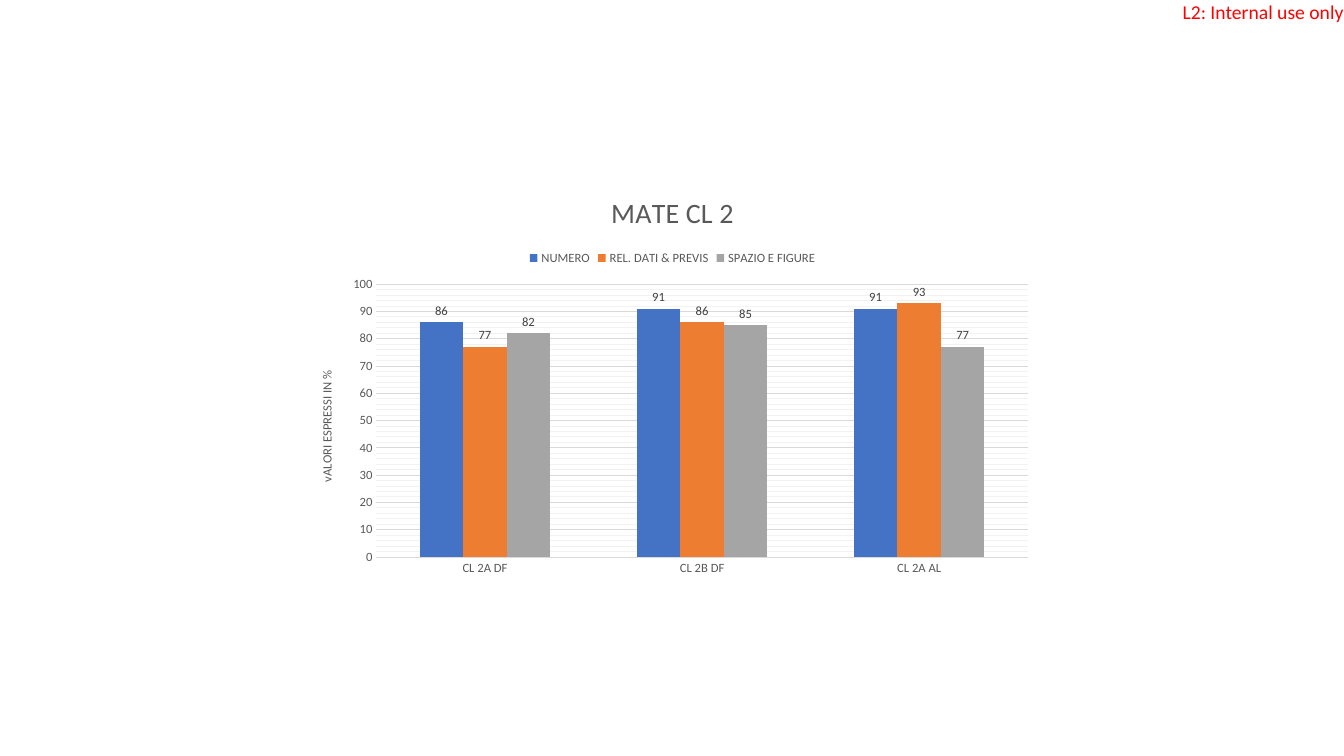
from dataclasses import dataclass

from lxml.etree import SubElement
from pptx import Presentation
from pptx.chart.data import CategoryChartData
from pptx.dml.color import RGBColor
from pptx.enum.chart import XL_CHART_TYPE as ChartType
from pptx.enum.chart import XL_LABEL_POSITION as LabelPos
from pptx.enum.chart import XL_LEGEND_POSITION as LegendPos
from pptx.enum.chart import XL_TICK_MARK as TickMark
from pptx.oxml.ns import qn
from pptx.util import Inches, Pt


@dataclass(frozen=True)
class Theme:
    font: str = "Calibri"
    notice: str = "FF0000"
    text: str = "595959"
    label: str = "404040"
    grid: str = "D9D9D9"
    minor_grid: str = "F2F2F2"
    series: tuple = ("4472C4", "ED7D31", "A5A5A5")
    notice_size: int = 14
    title_size: int = 20
    chart_size: int = 9
    line_width: float = 0.75


THEME = Theme()
CLASSES = ("CL 2A DF", "CL 2B DF", "CL 2A AL")
SCORES = {
    "NUMERO": (86, 91, 91),
    "REL. DATI & PREVIS": (77, 86, 93),
    "SPAZIO E FIGURE": (82, 85, 77),
}
PLOT_AREA = {"x": 0.1, "y": 0.27, "w": 0.88, "h": 0.67}


def style_font(font, size, color):
    font.name = THEME.font
    font.size = Pt(size)
    font.bold = False
    font.color.rgb = RGBColor.from_string(color)


def style_line(line, color):
    line.color.rgb = RGBColor.from_string(color)
    line.width = Pt(THEME.line_width)


def add_run(p, text, size, color):
    r = p.add_run()
    r.text = text
    style_font(r.font, size, color)


def add_notice(slide, text):
    box = slide.shapes.add_textbox(Inches(11.73), 0, Inches(1.64), Inches(0.23))
    tf = box.text_frame
    tf.margin_left = tf.margin_top = tf.margin_right = tf.margin_bottom = 0
    tf.word_wrap = False
    add_run(tf.paragraphs[0], text, THEME.notice_size, THEME.notice)


def set_title(titled, text, size):
    add_run(titled.text_frame.paragraphs[0], text, size, THEME.text)


def style_minor_grid(chart):
    grid = next(chart.element.iter(qn("c:minorGridlines")))
    line = SubElement(SubElement(grid, qn("c:spPr")), qn("a:ln"))
    line.set("w", str(Pt(THEME.line_width)))
    fill = SubElement(line, qn("a:solidFill"))
    SubElement(fill, qn("a:srgbClr")).set("val", THEME.minor_grid)


def style_axes(chart):
    cat, val = chart.category_axis, chart.value_axis
    for axis in (cat, val):
        axis.major_tick_mark = axis.minor_tick_mark = TickMark.NONE
        style_font(axis.tick_labels.font, THEME.chart_size, THEME.text)
    style_line(cat.format.line, THEME.grid)
    val.format.line.fill.background()
    val.minimum_scale, val.maximum_scale = 0, 100
    val.major_unit, val.minor_unit = 10, 2
    val.has_major_gridlines = val.has_minor_gridlines = True
    style_line(val.major_gridlines.format.line, THEME.grid)
    style_minor_grid(chart)
    val.tick_labels.number_format = "0"
    val.tick_labels.number_format_is_linked = False
    set_title(val.axis_title, "vALORI ESPRESSI IN %", THEME.chart_size)


def style_series(series, color):
    series.format.fill.solid()
    series.format.fill.fore_color.rgb = RGBColor.from_string(color)
    labels = series.data_labels
    labels.show_value = True
    labels.position = LabelPos.OUTSIDE_END
    labels.number_format = "0"
    labels.number_format_is_linked = False
    style_font(labels.font, THEME.chart_size, THEME.label)


def place_plot_area(chart):
    area = chart.element.chart.plotArea
    layout = area.find(qn("c:layout"))
    if layout is None:
        layout = SubElement(area, qn("c:layout"))
        area.insert(0, layout)
    manual = SubElement(layout, qn("c:manualLayout"))
    settings = {"layoutTarget": "inner", "xMode": "edge", "yMode": "edge", **PLOT_AREA}
    for name, value in settings.items():
        SubElement(manual, qn(f"c:{name}")).set("val", str(value))


def add_score_chart(slide):
    data = CategoryChartData(number_format="0")
    data.categories = CLASSES
    for name, values in SCORES.items():
        data.add_series(name, values)
    chart = slide.shapes.add_chart(
        ChartType.COLUMN_CLUSTERED,
        Inches(3), Inches(1.73), Inches(7.34), Inches(4.04), data,
    ).chart
    style_font(chart.font, THEME.chart_size, THEME.text)
    set_title(chart.chart_title, "MATE CL 2", THEME.title_size)
    chart.has_legend = True
    chart.legend.position = LegendPos.TOP
    chart.legend.include_in_layout = False
    style_font(chart.legend.font, THEME.chart_size, THEME.text)
    style_axes(chart)
    plot = chart.plots[0]
    plot.gap_width, plot.overlap = 199, 0
    plot.vary_by_categories = False
    for series, color in zip(plot.series, THEME.series):
        style_series(series, color)
    place_plot_area(chart)


def main():
    prs = Presentation()
    prs.slide_width, prs.slide_height = Inches(13.33), Inches(7.5)
    slide = prs.slides.add_slide(prs.slide_layouts[6])
    add_notice(slide, "L2: Internal use only")
    add_score_chart(slide)
    prs.save("out.pptx")


if __name__ == "__main__":
    main()
